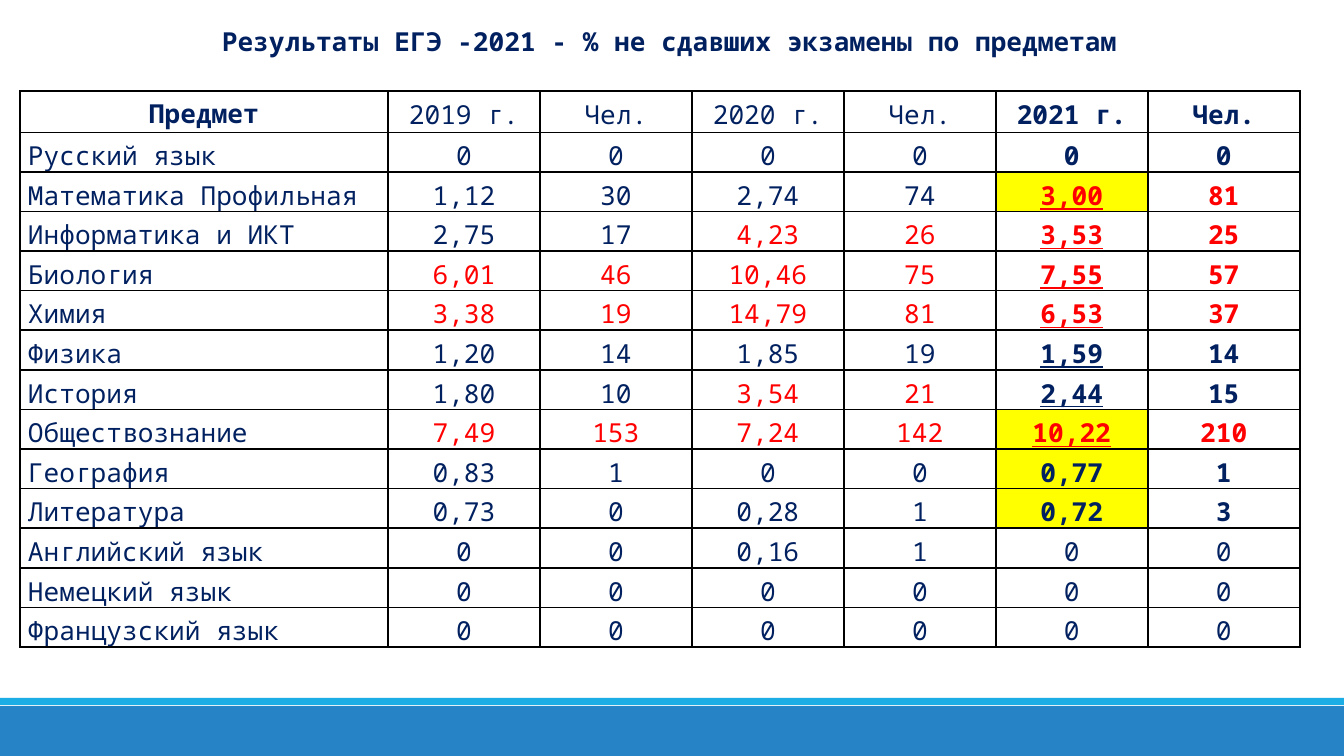
from lxml import etree
from pptx import Presentation
from pptx.dml.color import RGBColor
from pptx.enum.shapes import MSO_SHAPE
from pptx.enum.text import MSO_ANCHOR, MSO_AUTO_SIZE, PP_ALIGN
from pptx.oxml.ns import qn
from pptx.util import Emu, Pt

RECT = MSO_SHAPE.RECTANGLE
LEFT, CENTER = PP_ALIGN.LEFT, PP_ALIGN.CENTER
TOP, MIDDLE = MSO_ANCHOR.TOP, MSO_ANCHOR.MIDDLE
GROW = MSO_AUTO_SIZE.SHAPE_TO_FIT_TEXT

SCALE = 914400 / 134.4
NAVY, RED, YELLOW = "002060", "FF0000", "FFFF00"
LIMIT = 3  # shares from here on are red

TITLE = "Результаты ЕГЭ -2021 - % не сдавших экзамены по предметам"
HEAD = ["Предмет", "2019 г.", "Чел.", "2020 г.", "Чел.", "2021 г.", "Чел."]
EXAMS = [
    ["Русский язык", "0", "0", "0", "0", "0", "0"],
    ["Математика Профильная", "1,12", "30", "2,74", "74", "3,00", "81"],
    ["Информатика и ИКТ", "2,75", "17", "4,23", "26", "3,53", "25"],
    ["Биология", "6,01", "46", "10,46", "75", "7,55", "57"],
    ["Химия", "3,38", "19", "14,79", "81", "6,53", "37"],
    ["Физика", "1,20", "14", "1,85", "19", "1,59", "14"],
    ["История", "1,80", "10", "3,54", "21", "2,44", "15"],
    ["Обществознание", "7,49", "153", "7,24", "142", "10,22", "210"],
    ["География", "0,83", "1", "0", "0", "0,77", "1"],
    ["Литература", "0,73", "0", "0,28", "1", "0,72", "3"],
    ["Английский язык", "0", "0", "0,16", "1", "0", "0"],
    ["Немецкий язык", "0", "0", "0", "0", "0", "0"],
    ["Французский язык", "0", "0", "0", "0", "0", "0"],
]
FOREIGN = {"Английский язык", "Немецкий язык", "Французский язык"}


def px(n):
    return Emu(round(n * SCALE))


def color(code):
    return RGBColor.from_string(code)


def share(text):
    return float(text.replace(",", "."))


def put(item, form):
    for name, value in form.items():
        setattr(item, name, value)


def pad(item, side, end):
    put(item, {"margin_left": px(side), "margin_right": px(side),
               "margin_top": px(end), "margin_bottom": px(end)})


def write(frame, text, align, tone=NAVY, gap=None, **form):
    para = frame.paragraphs[0]
    put(para, {"alignment": align, "line_spacing": gap})
    run = para.add_run()
    run.text = text
    put(run.font, {"name": "Noto Sans Mono", "size": Pt(14), **form})
    run.font.color.rgb = color(tone)


def add_band(slide, top, high, tone):
    band = slide.shapes.add_shape(RECT, 0, px(top), px(1344), px(high))
    band.shadow.inherit = False
    band.fill.solid()
    band.fill.fore_color.rgb = color(tone)
    band.line.fill.background()


def add_title(slide):
    box = slide.shapes.add_textbox(px(40), px(20), px(1260), px(42))
    frame = box.text_frame
    put(frame, {"word_wrap": True, "auto_size": GROW})
    pad(frame, 9, 5)
    write(frame, TITLE, CENTER, bold=True)


def frame_cell(cell):
    props = cell._tc.get_or_add_tcPr()
    for side in ("lnL", "lnR", "lnT", "lnB"):
        line = etree.SubElement(props, qn("a:" + side), w=str(Pt(1)))
        fill = etree.SubElement(line, qn("a:solidFill"))
        etree.SubElement(fill, qn("a:srgbClr"), val="000000")


def fill_cell(cell, text, align, back=None, ends=0, **form):
    frame_cell(cell)
    if back:
        cell.fill.solid()
        cell.fill.fore_color.rgb = color(back)
    else:
        cell.fill.background()
    pad(cell, 8, ends)
    write(cell.text_frame, text, align, **form)


def fill_exam(cells, exam):
    """Mark high shares in red and a rise since 2020 in yellow."""
    fill_cell(cells[0], exam[0], LEFT, gap=1.15)
    cells[0].vertical_anchor = TOP
    for col in range(1, 7):
        rate = share(exam[(col - 1) // 2 * 2 + 1])
        last = col == 5
        rise = last and rate > share(exam[3])
        fill_cell(cells[col], exam[col], CENTER, YELLOW if rise else None,
                  tone=RED if rate >= LIMIT else NAVY, gap=1.15,
                  bold=col >= 5 and exam[0] not in FOREIGN,
                  underline=last and rate >= 1)
        cells[col].vertical_anchor = MIDDLE


def add_grid(slide):
    shape = slide.shapes.add_table(len(EXAMS) + 1, len(HEAD), px(20), px(91),
                                   px(1280), px(556))
    table = shape.table
    put(table, {"first_row": False, "horz_banding": False})
    for i, col in enumerate(table.columns):
        col.width = px(152 if i else 368)
    for i, row in enumerate(table.rows):
        row.height = px(515 / len(EXAMS) if i else 41)
    for i, text in enumerate(HEAD):
        cell = table.cell(0, i)
        fill_cell(cell, text, CENTER, ends=0 if i else 5,
                  gap=1.15 if i else None, bold=i in (0, 5, 6))
        cell.vertical_anchor = MIDDLE if i else TOP
    for row, exam in zip(list(table.rows)[1:], EXAMS):
        fill_exam(list(row.cells), exam)


def main():
    deck = Presentation()
    put(deck, {"slide_width": px(1344), "slide_height": px(756)})
    slide = deck.slides.add_slide(deck.slide_layouts[6])
    add_band(slide, 706, 50, "2683C6")
    add_band(slide, 698, 7, "1CADE4")
    add_title(slide)
    add_grid(slide)
    deck.save("out.pptx")


if __name__ == "__main__":
    main()
